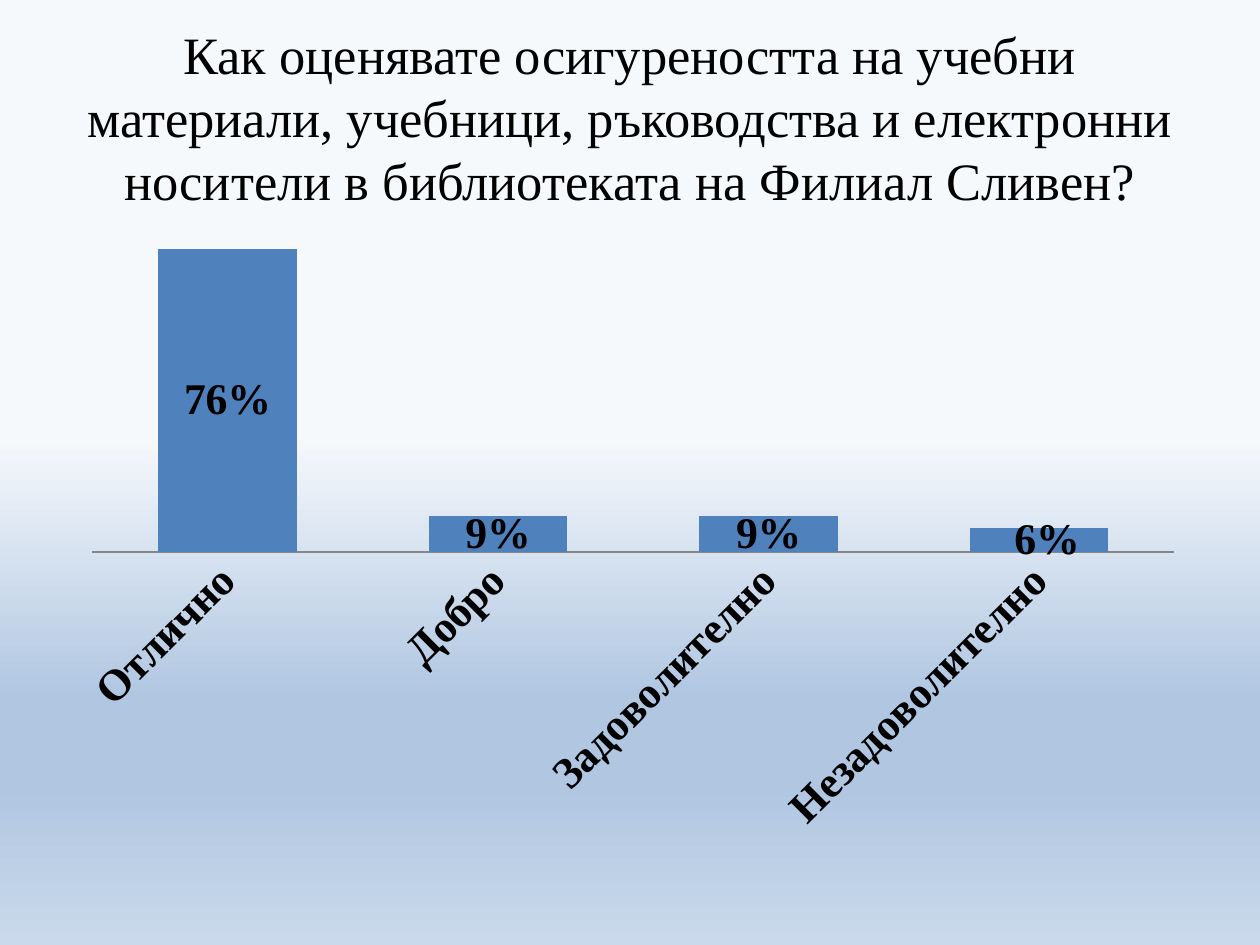
from lxml.etree import SubElement
from pptx import Presentation
from pptx.chart.data import CategoryChartData
from pptx.dml.color import RGBColor
from pptx.enum.chart import XL_CHART_TYPE, XL_LABEL_POSITION, XL_TICK_MARK
from pptx.enum.text import MSO_ANCHOR, PP_ALIGN
from pptx.oxml import parse_xml
from pptx.oxml.ns import nsdecls, qn
from pptx.util import Pt

BLACK = RGBColor(0x00, 0x00, 0x00)
BLUE = RGBColor(0x4F, 0x81, 0xBD)
GRAY = RGBColor(0x86, 0x86, 0x86)
PALE = RGBColor(0xF6, 0xF9, 0xFC)
MID = RGBColor(0xB0, 0xC6, 0xE1)
LIGHT = RGBColor(0xCA, 0xD9, 0xEB)

QUESTION = ("Как оценявате осигуреността на учебни материали, учебници, "
            "ръководства и електронни носители в библиотеката на Филиал Сливен?")
RATINGS = {"Отлично": 0.76, "Добро": 0.09,
           "Задоволително": 0.09, "Незадоволително": 0.06}


def set_font(font, size, name, bold=False, color=BLACK):
    font.size, font.name, font.bold = Pt(size), name, bold
    font.color.rgb = color


def write(tf, text, align=PP_ALIGN.CENTER, **style):
    p = tf.paragraphs[0]
    p.alignment = align
    r = p.add_run()
    r.text = text
    set_font(r.font, **style)


class Deck:
    font = "Times New Roman"

    def __init__(self, prs):
        self.s = prs.slides.add_slide(prs.slide_layouts[5])

    def background(self, stops):
        fill = self.s.background.fill
        fill.gradient()
        fill.gradient_angle = 270
        # The public gradient has two stops only, so the list is rewritten
        gs_list = self.s.background._cSld.find(".//" + qn("a:gsLst"))
        gs_list.clear()
        for pos, color in stops:
            gs = SubElement(gs_list, qn("a:gs"), pos=str(pos * 1000))
            SubElement(gs, qn("a:srgbClr"), val=str(color))

    def title(self, text, x, y, w, h, size):
        sp = self.s.shapes.title
        sp.left, sp.top, sp.width, sp.height = Pt(x), Pt(y), Pt(w), Pt(h)
        tf = sp.text_frame
        tf.word_wrap = True
        tf.vertical_anchor = MSO_ANCHOR.MIDDLE
        write(tf, text, size=size, name=self.font)

    def column_chart(self, values, x, y, w, h, size):
        data = CategoryChartData(number_format="0%")
        data.categories = list(values)
        data.add_series("Series 1", list(values.values()))
        chart = self.s.shapes.add_chart(
            XL_CHART_TYPE.COLUMN_STACKED, Pt(x), Pt(y), Pt(w), Pt(h), data).chart
        chart.has_legend = chart.has_title = False
        set_font(chart.font, 18, "Calibri")

        # Axes
        cat, val = chart.category_axis, chart.value_axis
        cat.major_tick_mark = XL_TICK_MARK.NONE
        cat.format.line.color.rgb = GRAY
        set_font(cat.tick_labels.font, size, self.font, bold=True)
        body = cat._element.find(qn("c:txPr")).find(qn("a:bodyPr"))
        body.set("rot", "-2700000")
        val.visible = val.has_major_gridlines = False
        val.minimum_scale, val.maximum_scale = 0, 0.8

        # Columns and their labels
        plot = chart.plots[0]
        plot.gap_width, plot.overlap, plot.vary_by_categories = 95, 100, False
        series = plot.series[0]
        series.format.fill.solid()
        series.format.fill.fore_color.rgb = BLUE
        labels = series.data_labels
        labels.show_value = True
        labels.number_format, labels.number_format_is_linked = "0%", False
        labels.position = XL_LABEL_POSITION.CENTER
        set_font(labels.font, size, self.font, bold=True)
        self.shift_label(series, len(values) - 1, 0.007)

    def shift_label(self, series, index, dx):
        label = series.points[index].data_label
        set_font(label.font, 25, self.font, bold=True)
        label.position = XL_LABEL_POSITION.CENTER
        idx = series._element.find(".//" + qn("c:dLbl")).find(qn("c:idx"))
        idx.addnext(parse_xml(
            f'<c:numFmt {nsdecls("c")} formatCode="0%" sourceLinked="0"/>'))
        idx.addnext(parse_xml(
            f'<c:layout {nsdecls("c")}><c:manualLayout><c:x val="{dx}"/>'
            '<c:y val="0"/></c:manualLayout></c:layout>'))


def main():
    prs = Presentation()
    prs.slide_width, prs.slide_height = Pt(720), Pt(540)
    deck = Deck(prs)
    deck.background([(0, PALE), (46, PALE), (74, MID), (83, MID), (100, LIGHT)])
    deck.title(QUESTION, 36, 21.6, 648, 90, size=30)
    deck.column_chart(RATINGS, 36, 126, 648, 356.4, size=25)
    prs.save("out.pptx")


if __name__ == "__main__":
    main()
